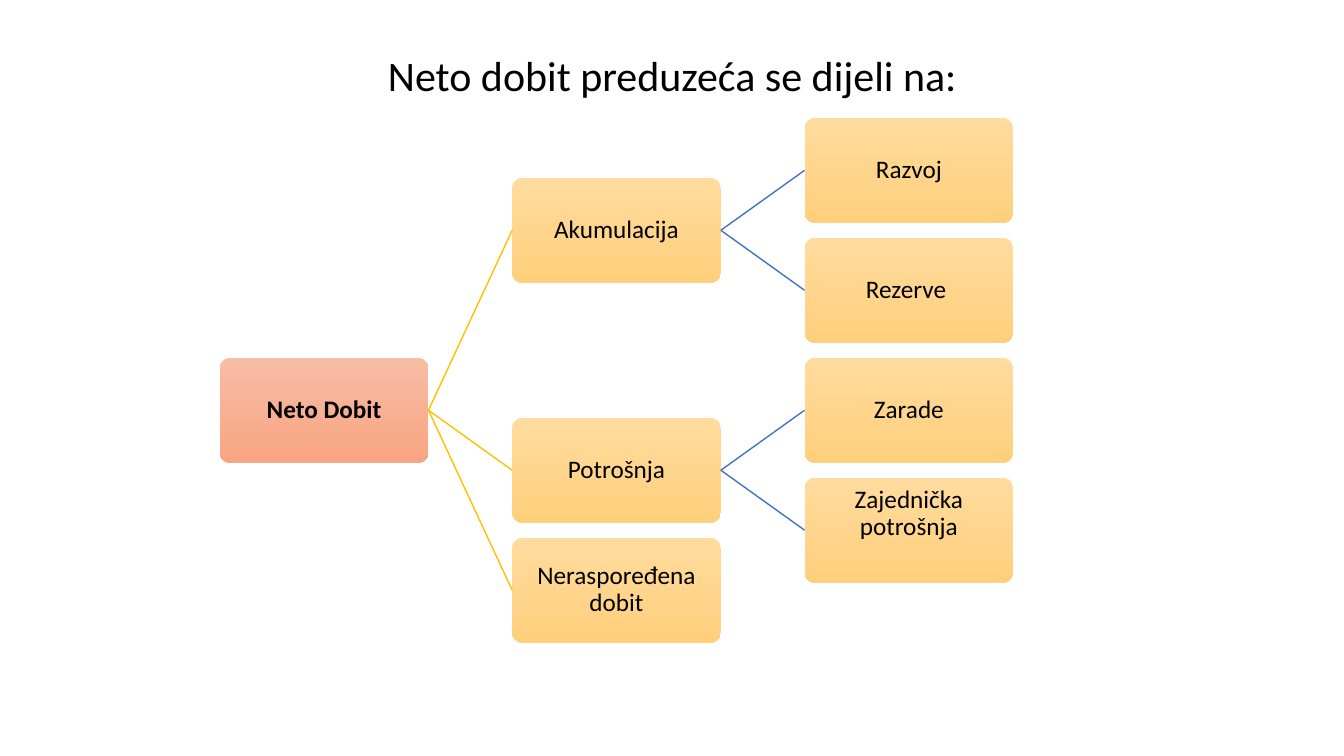
from dataclasses import dataclass

from lxml.etree import SubElement
from pptx import Presentation
from pptx.dml.color import RGBColor
from pptx.enum.shapes import MSO_CONNECTOR, MSO_SHAPE
from pptx.enum.text import MSO_ANCHOR, PP_ALIGN
from pptx.oxml.ns import qn
from pptx.util import Inches, Pt


@dataclass(frozen=True)
class Theme:
    font: str = "Calibri"
    title_size: int = 30
    node_size: int = 18
    text: str = "000000"
    root_fill: tuple = ("F7BDA5", "F8A582")
    node_fill: tuple = ("FFDB9E", "FFD07C")
    root_line: str = "FFC000"
    branch_line: str = "4472C4"


THEME = Theme()

# Grid of the tree, in inches
LEFT, TOP = 2.18, 1.17
COLUMN, ROW = 2.9, 1.19
NODE_WIDTH, NODE_HEIGHT = 2.07, 1.04
LEFT_SITE, RIGHT_SITE = 1, 3

# Label, column, row, parent
NODES = [
    ("Neto Dobit", 0, 2, None),
    ("Akumulacija", 1, 0.5, "Neto Dobit"),
    ("Razvoj", 2, 0, "Akumulacija"),
    ("Rezerve ", 2, 1, "Akumulacija"),
    ("Potrošnja", 1, 2.5, "Neto Dobit"),
    ("Zarade", 2, 2, "Potrošnja"),
    ("Zajednička potrošnja", 2, 3, "Potrošnja"),
    ("Neraspoređena dobit", 1, 3.5, "Neto Dobit"),
]
BOTTOM_INSETS = {"Zajednička potrošnja": 0.36}


def apply(target, values):
    for name, value in values.items():
        setattr(target, name, value)


def write(shape, text, size, bold=False, inset=0.04, bottom=0.04):
    """Fill a shape with one centred paragraph."""
    frame = shape.text_frame
    apply(frame, {
        "word_wrap": True, "vertical_anchor": MSO_ANCHOR.MIDDLE,
        "margin_left": Inches(inset), "margin_right": Inches(inset),
        "margin_top": Inches(inset), "margin_bottom": Inches(bottom),
    })
    para = frame.paragraphs[0]
    apply(para, {"alignment": PP_ALIGN.CENTER, "line_spacing": 0.9})
    span = para.add_run()
    span.text = text
    apply(span.font, {"name": THEME.font, "size": Pt(size), "bold": bold})
    span.font.color.rgb = RGBColor.from_string(THEME.text)


def add_title(page, text):
    title = page.shapes.title
    apply(title, {"left": Inches(2.17), "top": Inches(0.3),
                  "width": Inches(9), "height": Inches(0.95)})
    write(title, text, THEME.title_size)


def add_node(page, label, column, row, is_root):
    box = page.shapes.add_shape(
        MSO_SHAPE.ROUNDED_RECTANGLE,
        Inches(LEFT + column * COLUMN), Inches(TOP + row * ROW),
        Inches(NODE_WIDTH), Inches(NODE_HEIGHT))
    box.adjustments[0] = 0.1
    box.shadow.inherit = False
    box.line.fill.background()
    box.fill.gradient()
    box.fill.gradient_angle = 270
    colours = THEME.root_fill if is_root else THEME.node_fill
    for stop, colour in zip(box.fill.gradient_stops, colours):
        stop.color.rgb = RGBColor.from_string(colour)
    write(box, label, THEME.node_size, is_root,
          bottom=BOTTOM_INSETS.get(label, 0.04))
    return box


def add_link(page, parent, child, colour):
    link = page.shapes.add_connector(MSO_CONNECTOR.STRAIGHT, 0, 0, 0, 0)
    link.begin_connect(parent, RIGHT_SITE)
    link.end_connect(child, LEFT_SITE)
    link.line.width = Pt(1)
    link.line.color.rgb = RGBColor.from_string(colour)
    SubElement(link.element.spPr, qn("a:effectLst"))


def add_tree(page):
    boxes = {}
    for label, column, row, parent in NODES:
        boxes[label] = add_node(page, label, column, row, parent is None)
        if parent:
            colour = THEME.root_line if column == 1 else THEME.branch_line
            add_link(page, boxes[parent], boxes[label], colour)


def main():
    deck = Presentation()
    apply(deck, {"slide_width": Inches(13.33), "slide_height": Inches(7.5)})
    title_only = deck.slide_layouts[5]
    page = deck.slides.add_slide(title_only)
    add_title(page, "Neto dobit preduzeća se dijeli na:")
    add_tree(page)
    deck.save("out.pptx")


if __name__ == "__main__":
    main()
